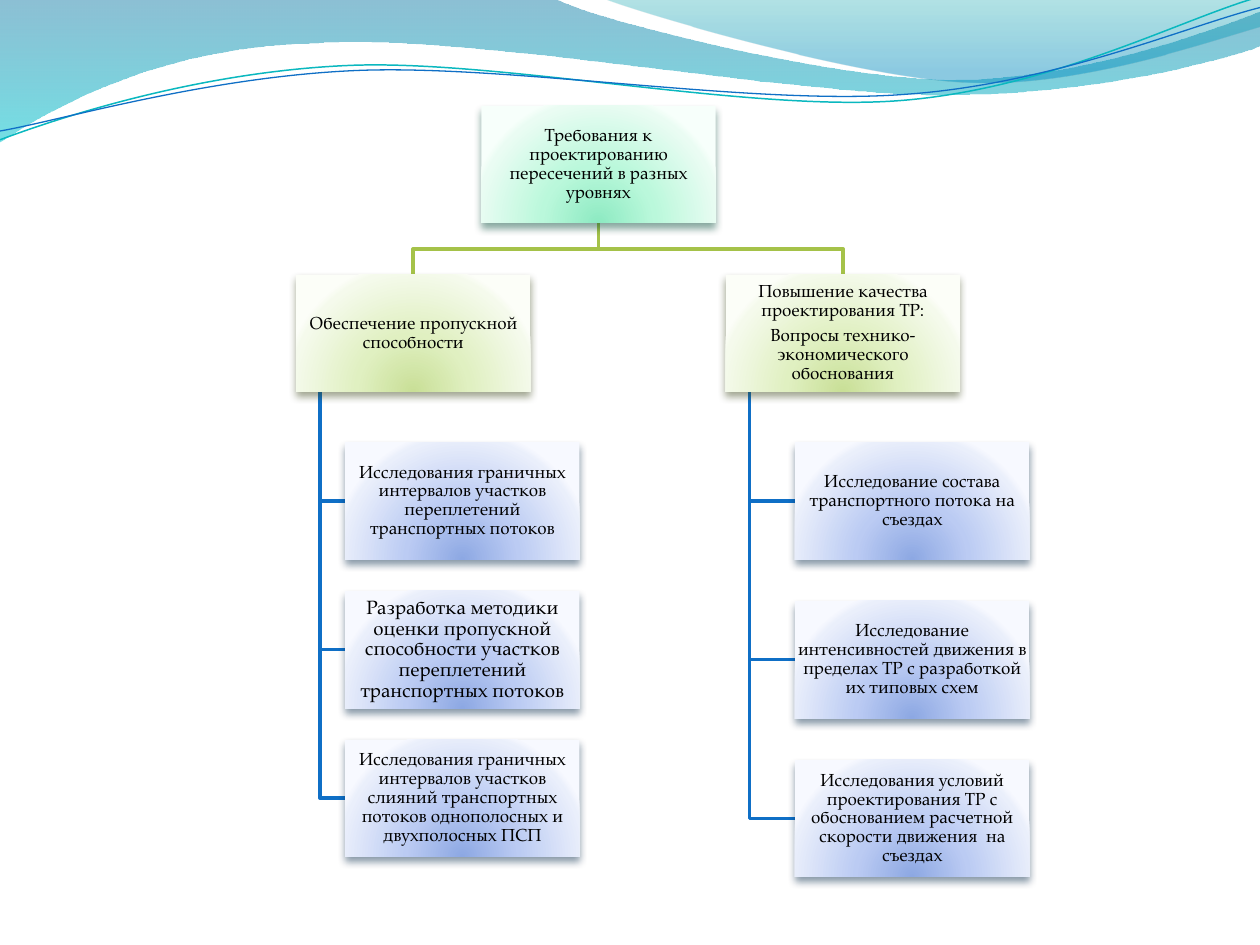
"""Build a slide with a tree of design requirements for grade-separated junctions."""
from dataclasses import dataclass
from typing import NamedTuple

from lxml import etree
from pptx import Presentation
from pptx import util as u
from pptx.dml.color import RGBColor
from pptx.enum import shapes, text
from pptx.oxml import ns

FONT = "TeX Gyre Pagella"
BLACK = RGBColor(0x00, 0x00, 0x00)
BLUE = RGBColor(0x0F, 0x6F, 0xC6)
GREEN = RGBColor(0xA5, 0xC2, 0x49)
TEAL = RGBColor(0x0A, 0xB8, 0xBF)
BOX_WIDTH, BOX_HEIGHT = 1.86, 0.93
BRANCH_TOP, LEAF_TOP = 2.18, 3.51
TRUNK_INSET = 0.19
Point = tuple[float, float]


class Stop(NamedTuple):
    position: int
    color: RGBColor
    opacity: int = 100


class Theme(NamedTuple):
    stops: list[Stop]
    shadow: RGBColor


@dataclass
class Box:
    left: float
    top: float
    theme: Theme
    paragraphs: list[str]
    size: float = 10

    @property
    def center(self) -> float:
        return self.left + BOX_WIDTH / 2

    @property
    def middle(self) -> float:
        return self.top + BOX_HEIGHT / 2

    @property
    def bottom(self) -> float:
        return self.top + BOX_HEIGHT


@dataclass
class Branch:
    head: Box
    leaves: list[Box]


@dataclass
class Wave:
    """An outline whose pieces are a point (line) or three points (curve)."""
    start: Point
    pieces: list[tuple[Point, ...]]
    stops: list[Stop] | None = None
    line: RGBColor | None = None
    width: float = 0.75


def make_theme(colors: str, shadow: str) -> Theme:
    stops = [Stop(position, RGBColor.from_string(color))
             for position, color in zip((0, 43, 93, 100), colors.split())]
    return Theme(stops, RGBColor.from_string(shadow))


MINT = make_theme("8DEAC2 BAF8DB EAFCF3 F7FFFB", "044A37")
LIME = make_theme("C9DF97 E0F0C1 F5FAEC FCFEF8", "3A4519")
SKY = make_theme("8DA8E3 BBCBF3 EAEFFB F7F9FF", "042747")

WAVES = [
    Wave((0, 0), [((4.4, -0.01),), ((4.76, 0.17), (6.64, 0.63), (7.58, 0.63)),
                  ((8.53, 0.63), (9.58, 0.26), (10, 0.09)), ((10.01, 0.36),),
                  ((9.83, 0.44), (8.7, 0.76), (7.46, 0.75)),
                  ((6.22, 0.75), (3.82, 0.28), (2.57, 0.34)),
                  ((1.29, 0.36), (0.46, 0.83), (-0.01, 1.13)), ((0, 0),)],
         stops=[Stop(0, RGBColor(0x00, 0x74, 0xA1), 45), Stop(100, RGBColor(0x00, 0xC6, 0xCF), 55)]),
    Wave((4.79, -0.01), [((5.09, 0.11), (6.82, 0.62), (7.69, 0.65)),
                         ((8.56, 0.69), (9.61, 0.32), (10, 0.21)), ((10, 0),), ((4.79, -0.01),)],
         stops=[Stop(0, RGBColor(0x00, 0xA1, 0xA9), 30), Stop(80, RGBColor(0x00, 0x8B, 0xBF), 45)]),
    Wave((0, 1.11), [((0.48, 0.93), (1.58, 0.57), (2.77, 0.52)),
                     ((3.95, 0.47), (5.93, 0.89), (7.13, 0.8)),
                     ((8.33, 0.71), (9.38, 0.15), (9.98, -0.02))], line=TEAL, width=0.85),
    Wave((0, 1.04), [((0.47, 0.96), (1.64, 0.61), (2.83, 0.56)),
                     ((4.03, 0.51), (5.97, 0.84), (7.17, 0.75)),
                     ((8.36, 0.67), (9.41, 0.21), (10, 0.06))], line=BLUE),
]

ROOT = Box(3.82, 0.84, MINT, ["Требования к проектированию пересечений в разных уровнях"])


def make_leaves(left: float, pitch: float, entries: list[tuple[str, float]]) -> list[Box]:
    return [Box(left, LEAF_TOP + row * pitch, SKY, [entry], size)
            for row, (entry, size) in enumerate(entries)]


BRANCHES = [
    Branch(Box(2.35, BRANCH_TOP, LIME, ["Обеспечение пропускной способности"]),
           make_leaves(2.74, 1.18, [
               ("Исследования граничных интервалов участков переплетений транспортных потоков", 10),
               ("Разработка методики оценки пропускной способности участков переплетений "
                "транспортных потоков", 11),
               ("Исследования граничных интервалов участков слияний транспортных потоков "
                "однополосных и двухполосных ПСП", 10)])),
    Branch(Box(5.76, BRANCH_TOP, LIME, ["Повышение качества проектирования ТР:",
                                        "Вопросы технико-экономического обоснования"]),
           make_leaves(6.31, 1.26, [
               ("Исследование состава транспортного потока на съездах", 10),
               ("Исследование интенсивностей движения в пределах ТР с разработкой их типовых схем", 10),
               ("Исследования условий проектирования ТР с обоснованием расчетной скорости "
                "движения  на съездах", 10)])),
]


def add_color(parent, color: RGBColor, opacity: int) -> None:
    element = etree.SubElement(parent, ns.qn("a:srgbClr"), val=str(color))
    etree.SubElement(element, ns.qn("a:alpha"), val=str(opacity * 1000))


def set_gradient(shape, stops: list[Stop], radial: bool) -> None:
    shape.fill.background()
    properties = shape._element.spPr
    gradient = etree.Element(ns.qn("a:gradFill"), rotWithShape="1")
    stop_list = etree.SubElement(gradient, ns.qn("a:gsLst"))
    for stop in stops:
        element = etree.SubElement(stop_list, ns.qn("a:gs"), pos=str(stop.position * 1000))
        add_color(element, stop.color, stop.opacity)
    if radial:
        circle = etree.SubElement(gradient, ns.qn("a:path"), path="circle")
        etree.SubElement(circle, ns.qn("a:fillToRect"), l="50000", t="130000", r="50000", b="-30000")
    else:
        etree.SubElement(gradient, ns.qn("a:lin"), ang="5400000", scaled="0")
    properties.replace(properties.find(ns.qn("a:noFill")), gradient)


def set_shadow(shape, color: RGBColor) -> None:
    effects = shape._element.spPr.find(ns.qn("a:effectLst"))
    shadow = etree.SubElement(effects, ns.qn("a:outerShdw"), blurRad=str(u.Pt(4.5)),
                              dist=str(u.Pt(3)), dir="5400000", rotWithShape="0")
    add_color(shadow, color, 48)


def add_outline(slide, points: list[Point], *, line: RGBColor | None = None,
                width: float = 2, closed: bool = False):
    start, *rest = [(u.Inches(x), u.Inches(y)) for x, y in points]
    builder = slide.shapes.build_freeform(*start)
    builder.add_line_segments(rest, close=closed)
    shape = builder.convert_to_shape()
    shape.shadow.inherit = False
    shape.fill.background()
    if line is None:
        shape.line.fill.background()
    else:
        shape.line.color.rgb = line
        shape.line.width = u.Pt(width)
    return shape


def add_wave(slide, wave: Wave) -> None:
    points = [wave.start, *(point for piece in wave.pieces for point in piece)]
    shape = add_outline(slide, points, line=wave.line, width=wave.width, closed=wave.stops is not None)
    segments = iter(list(shape._element.spPr.iter(ns.qn("a:lnTo"))))
    for piece in wave.pieces:
        first, *others = [next(segments) for _ in piece]
        if others:
            first.tag = ns.qn("a:cubicBezTo")
        for segment in others:
            first.append(segment[0])
            segment.getparent().remove(segment)
    if wave.stops:
        set_gradient(shape, wave.stops, radial=False)


def add_branch_lines(slide, branch: Branch) -> None:
    head = branch.head
    trunk = head.left + TRUNK_INSET
    for leaf in branch.leaves:
        add_outline(slide, [(trunk, head.bottom), (trunk, leaf.middle), (leaf.left, leaf.middle)], line=BLUE)
    bend = (ROOT.bottom + head.top) / 2
    add_outline(slide, [(ROOT.center, ROOT.bottom), (ROOT.center, bend),
                        (head.center, bend), (head.center, head.top)], line=GREEN)


def write_text(frame, paragraphs: list[str], *, size: float, color: RGBColor = BLACK) -> None:
    frame.word_wrap = True
    frame.vertical_anchor = text.MSO_ANCHOR.MIDDLE
    frame.margin_left = frame.margin_right = frame.margin_top = frame.margin_bottom = u.Inches(0.01)
    for index, content in enumerate(paragraphs):
        paragraph = frame.add_paragraph() if index else frame.paragraphs[0]
        paragraph.alignment = text.PP_ALIGN.CENTER
        paragraph.line_spacing = 0.9
        paragraph.space_after = u.Pt(0.35 * size)
        run = paragraph.add_run()
        run.text = content
        run.font.name, run.font.size, run.font.color.rgb = FONT, u.Pt(size), color


def add_box(slide, box: Box) -> None:
    shape = slide.shapes.add_shape(shapes.MSO_SHAPE.RECTANGLE, u.Inches(box.left), u.Inches(box.top),
                                   u.Inches(BOX_WIDTH), u.Inches(BOX_HEIGHT))
    shape.line.fill.background()
    shape.shadow.inherit = False
    set_gradient(shape, box.theme.stops, radial=True)
    set_shadow(shape, box.theme.shadow)
    write_text(shape.text_frame, box.paragraphs, size=box.size)


def main() -> None:
    presentation = Presentation()
    presentation.slide_width, presentation.slide_height = u.Inches(10), u.Inches(7.5)
    slide = presentation.slides.add_slide(presentation.slide_layouts[6])
    for wave in WAVES:
        add_wave(slide, wave)
    for branch in reversed(BRANCHES):
        add_branch_lines(slide, branch)
    add_box(slide, ROOT)
    for branch in BRANCHES:
        for box in (branch.head, *branch.leaves):
            add_box(slide, box)
    presentation.save("out.pptx")


if __name__ == "__main__":
    main()
